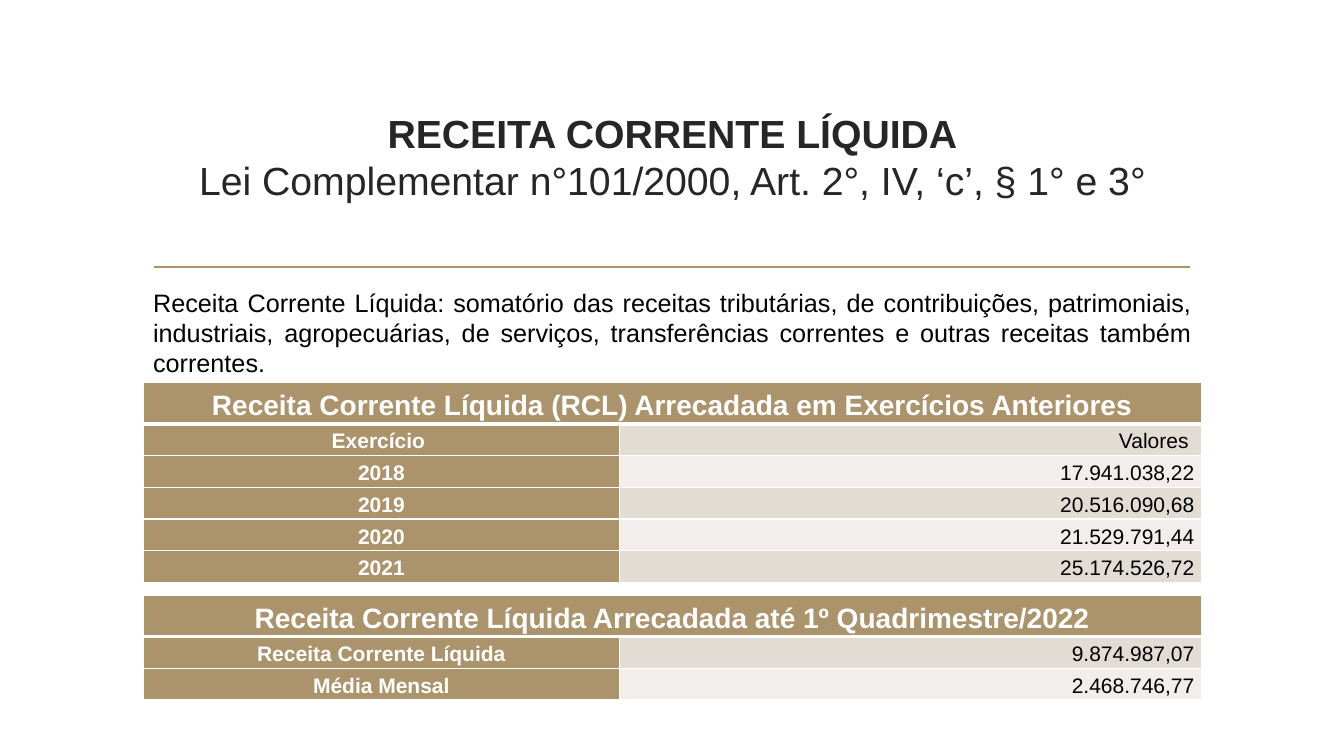
from copy import deepcopy

from lxml.etree import SubElement
from pptx import Presentation
from pptx.dml.color import RGBColor
from pptx.enum.shapes import MSO_CONNECTOR as Connector
from pptx.enum.text import MSO_ANCHOR as Anchor, MSO_AUTO_SIZE as AutoSize, PP_ALIGN as Align
from pptx.oxml.ns import qn
from pptx.util import Cm, Pt

COLORS = {"gold": "AB946B", "dark": "262626", "black": "000000", "white": "FFFFFF",
          "sand": "E2DCD4", "ivory": "F1EEEB"}
FONT = "Arial"
LEFT, WIDTH = 3.61, 26.67
LABEL_WIDTH, HEADING_HEIGHT, ROW_HEIGHT = 12.0, 1.04, 0.8


def rgb(name):
    return RGBColor.from_string(COLORS[name])


class RevenueSlide:
    """Holds the style and the current slide, and adds its elements."""

    def __init__(self, deck):
        self.slide = deck.slides.add_slide(deck.slide_layouts[5])

    def add_text(self, paragraph, text, size, color, bold=False):
        run = paragraph.add_run()
        run.text = text
        run.font.name = FONT
        run.font.size = Pt(size)
        run.font.bold = bold
        run.font.color.rgb = rgb(color)
        return run

    def title(self, heading, law, top, height):
        title = self.slide.shapes.title
        title.left, title.top = Cm(LEFT), Cm(top)
        title.width, title.height = Cm(WIDTH), Cm(height)
        frame = title.text_frame
        frame.auto_size = AutoSize.NONE
        frame.word_wrap = True
        frame.vertical_anchor = Anchor.MIDDLE
        frame.margin_bottom = Cm(1.3)
        paragraph = frame.paragraphs[0]
        paragraph.alignment = Align.CENTER
        heading_run = self.add_text(paragraph, heading, 28, "dark", True)
        paragraph.add_line_break()
        line_break = paragraph._p.find(qn("a:br"))
        line_break.append(deepcopy(heading_run._r.rPr))
        self.add_text(paragraph, law, 28, "dark")

    def rule(self, left, right, top):
        rule = self.slide.shapes.add_connector(
            Connector.STRAIGHT, Cm(left), Cm(top), Cm(right), Cm(top))
        rule.line.color.rgb = rgb("gold")
        rule.line.width = Pt(1.25)
        SubElement(rule._element.spPr, qn("a:effectLst"))

    def definition(self, text, top, height):
        box = self.slide.shapes.add_textbox(Cm(LEFT), Cm(top), Cm(WIDTH), Cm(height))
        box.text_frame.word_wrap = True
        paragraph = box.text_frame.paragraphs[0]
        paragraph.alignment = Align.JUSTIFY
        self.add_text(paragraph, text, 18, "black")

    def borders(self, cell, top, bottom):
        properties = cell._tc.get_or_add_tcPr()
        for side, width in (("L", 1), ("R", 1), ("T", top), ("B", bottom)):
            line = SubElement(properties, qn(f"a:ln{side}"), w=str(Pt(width)))
            fill = SubElement(line, qn("a:solidFill"))
            SubElement(fill, qn("a:srgbClr"), val=COLORS["white"])

    def cell(self, cell, text, size, color, fill, align, bold):
        cell.fill.solid()
        cell.fill.fore_color.rgb = rgb(fill)
        cell.vertical_anchor = Anchor.MIDDLE
        cell.margin_left = cell.margin_right = Cm(0.18)
        cell.margin_top = cell.margin_bottom = Cm(0.03)
        paragraph = cell.text_frame.paragraphs[0]
        paragraph.alignment = align
        paragraph.line_spacing = 1.15
        self.add_text(paragraph, text, size, color, bold)

    def table(self, heading, entries, top):
        height = HEADING_HEIGHT + ROW_HEIGHT * len(entries)
        table = self.slide.shapes.add_table(
            len(entries) + 1, 2, Cm(LEFT), Cm(top), Cm(WIDTH), Cm(height)).table
        table.columns[0].width = Cm(LABEL_WIDTH)
        table.columns[1].width = Cm(WIDTH - LABEL_WIDTH)
        for index, row in enumerate(table.rows):
            row.height = Cm(ROW_HEIGHT if index else HEADING_HEIGHT)
            for cell in row.cells:
                self.borders(cell, 3 if index == 1 else 1, 1 if index else 3)
        table.cell(0, 0).merge(table.cell(0, 1))
        self.cell(table.cell(0, 0), heading, 20, "white", "gold", Align.CENTER, True)
        for index, (label, value) in enumerate(entries, 1):
            band = "sand" if index % 2 else "ivory"
            self.cell(table.cell(index, 0), label, 15, "white", "gold", Align.CENTER, True)
            self.cell(table.cell(index, 1), value, 15, "black", band, Align.RIGHT, False)


def main():
    deck = Presentation()
    deck.slide_width, deck.slide_height = Cm(33.87), Cm(19.05)
    page = RevenueSlide(deck)
    page.rule(3.89, 30, 6.73)
    page.title("RECEITA CORRENTE LÍQUIDA",
               "Lei Complementar n°101/2000, Art. 2°, IV, ‘c’, § 1° e 3°", 2.72, 3.63)
    page.definition(
        "Receita Corrente Líquida: somatório das receitas tributárias, de contribuições, "
        "patrimoniais, industriais, agropecuárias, de serviços, transferências correntes "
        "e outras receitas também correntes. ", 7.11, 5.64)
    page.table("Receita Corrente Líquida (RCL) Arrecadada em Exercícios Anteriores",
               [("Exercício ", "Valores "), ("2018", "17.941.038,22"),
                ("2019", "20.516.090,68"), ("2020", "21.529.791,44"),
                ("2021", "25.174.526,72")], 9.64)
    page.table("Receita Corrente Líquida Arrecadada até 1º Quadrimestre/2022",
               [("Receita Corrente Líquida", "9.874.987,07"),
                ("Média Mensal", "2.468.746,77")], 15)
    deck.save("out.pptx")


if __name__ == "__main__":
    main()
